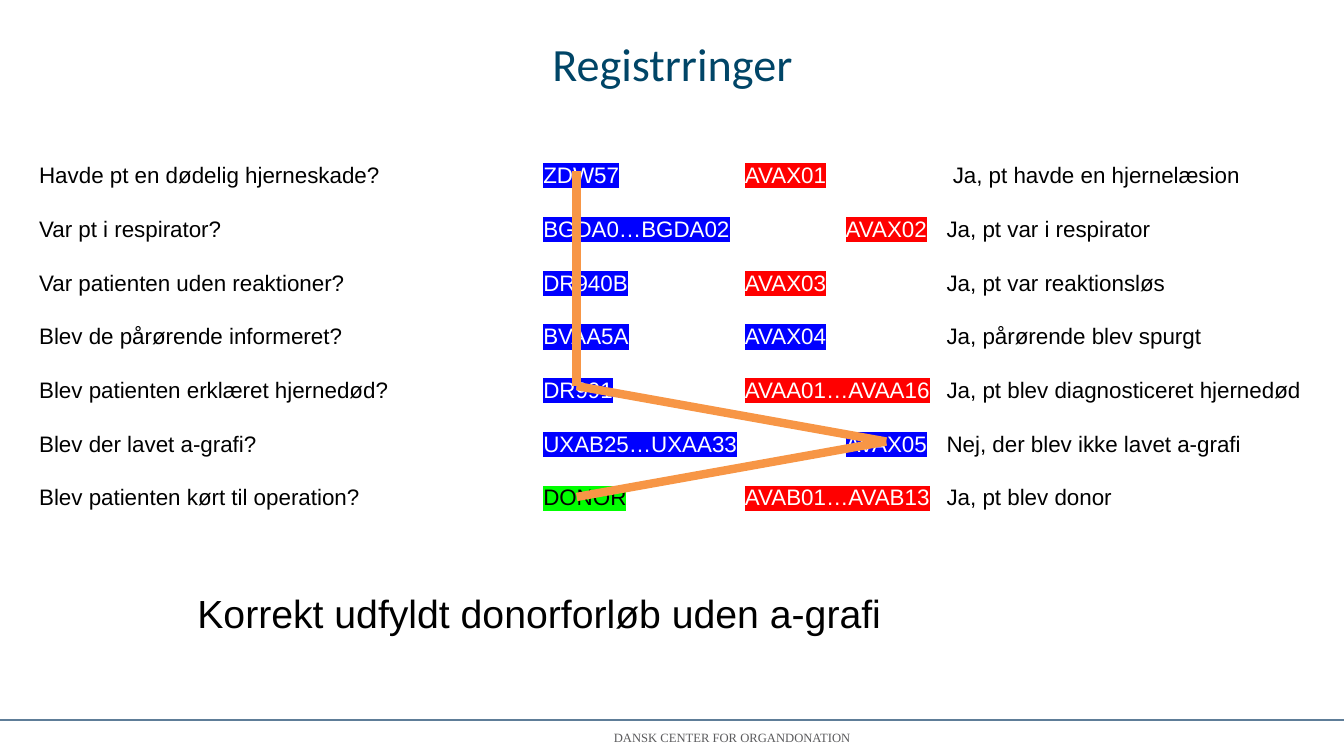
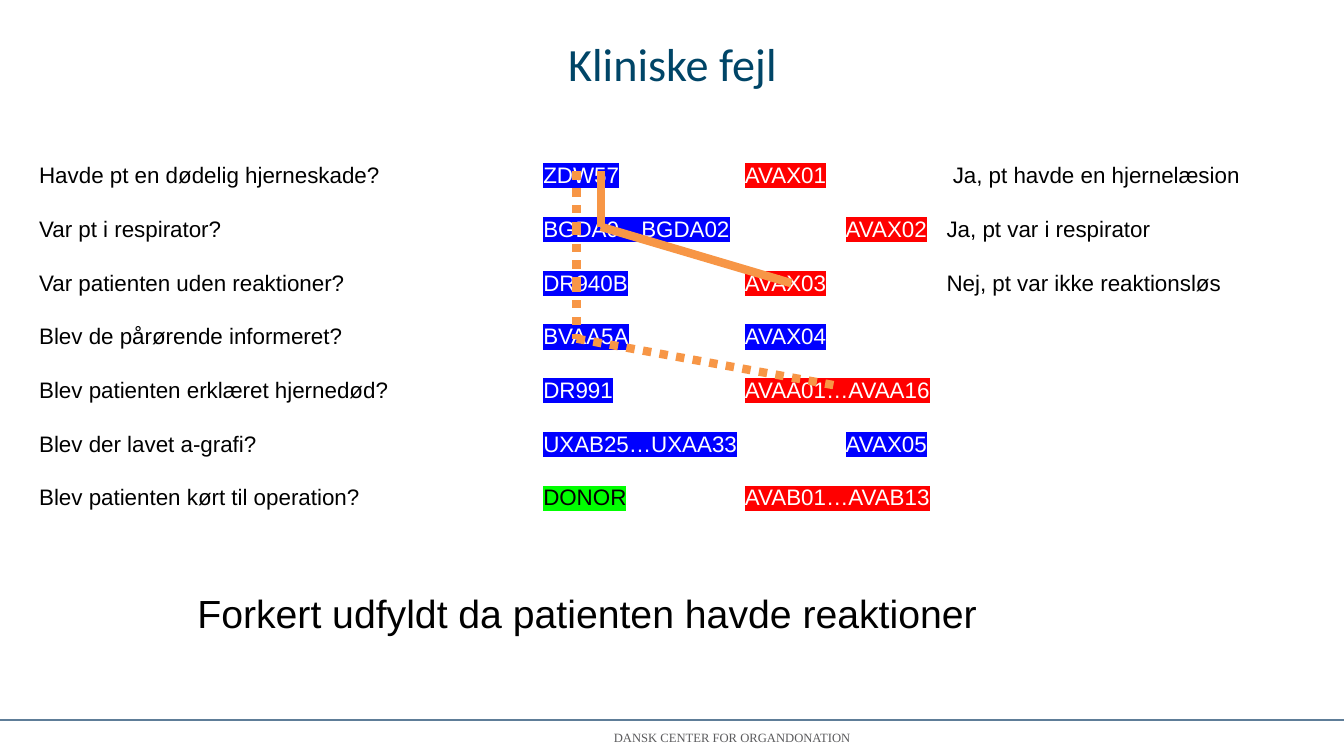
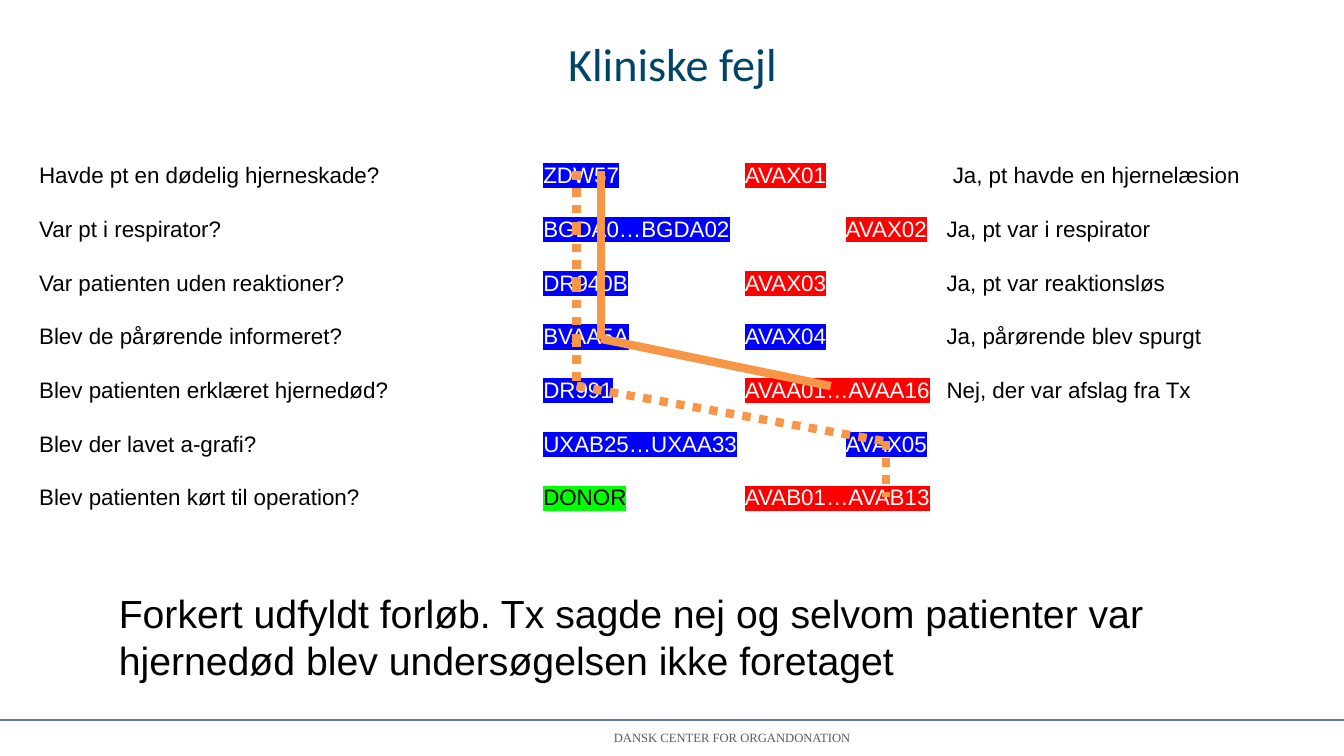
from lxml import etree
from pptx import Presentation
from pptx import util as u
from pptx.dml.color import RGBColor
from pptx.enum import dml, shapes, text
from pptx.oxml import ns

W, H = 13.33, 7.5
COLORS = {
    "title": "004567", "text": "000000", "white": "FFFFFF", "footer": "5B5B5D",
    "rule": "5E7D98", "path": "F79646",
    "blue": "0000FF", "red": "FF0000", "green": "00FF00",
}
CODE_TAB, NEAR_TAB, FAR_TAB, ANSWER_TAB = 5, 7, 8, 9
ROW_Y = [1.7, 2.25, 2.81, 3.36, 3.83, 4.38, 4.93]
MAIN_X, SIDE_X, FAR_X = 5.72, 5.96, 8.79

QUESTIONS = [
    ("Havde pt en dødelig hjerneskade?", "ZDW57", "blue", "AVAX01", "red", NEAR_TAB),
    ("Var pt i respirator?", "BGDA0…BGDA02", "blue", "AVAX02", "red", FAR_TAB),
    ("Var patienten uden reaktioner?", "DR940B", "blue", "AVAX03", "red", NEAR_TAB),
    ("Blev de pårørende informeret?", "BVAA5A", "blue", "AVAX04", "blue", NEAR_TAB),
    ("Blev patienten erklæret hjernedød?", "DR991", "blue", "AVAA01…AVAA16", "red", NEAR_TAB),
    ("Blev der lavet a-grafi?", "UXAB25…UXAA33", "blue", "AVAX05", "blue", FAR_TAB),
    ("Blev patienten kørt til operation?", "DONOR", "green", "AVAB01…AVAB13", "red", NEAR_TAB),
]
FIRST_ANSWERS = [" Ja, pt havde en hjernelæsion", "Ja, pt var i respirator"]
NO_REACTION, RELATIVES_ASKED = "Ja, pt var reaktionsløs", "Ja, pårørende blev spurgt"


def rgb(name):
    return RGBColor.from_string(COLORS[name])


def set_font(font, name, size, color):
    font.name = name
    font.size = u.Pt(size)
    font.color.rgb = rgb(color)


def add_text_box(s, x, y, w, h):
    tf = s.shapes.add_textbox(*map(u.Inches, (x, y, w, h))).text_frame
    tf.word_wrap = True
    return tf


def add_line(s, start, end, color, width, dashed=False):
    line = s.shapes.add_connector(
        shapes.MSO_CONNECTOR.STRAIGHT, *map(u.Inches, (*start, *end)))
    line.line.color.rgb = rgb(color)
    line.line.width = u.Pt(width)
    if dashed:
        line.line.dash_style = dml.MSO_LINE.ROUND_DOT
    etree.SubElement(line.element.spPr, ns.qn("a:effectLst"))
    return line


def add_path(s, points, dashed=False):
    stops = [(x, ROW_Y[row]) for x, row in points]
    for start, end in zip(stops, stops[1:]):
        add_line(s, start, end, "path", 6, dashed)


def add_tabs(p, positions):
    tabs = etree.SubElement(p._p.get_or_add_pPr(), ns.qn("a:tabLst"))
    for position in positions:
        etree.SubElement(tabs, ns.qn("a:tab"), pos=str(u.Inches(position)), algn="l")


def add_run(p, words):
    r = p.add_run()
    r.text = words
    return r


def add_code(p, code, color):
    add_run(p, "\t")
    r = add_run(p, code)
    r.font.color.rgb = rgb("text" if color == "green" else "white")
    mark = etree.SubElement(r._r.get_or_add_rPr(), ns.qn("a:highlight"))
    etree.SubElement(mark, ns.qn("a:srgbClr"), val=COLORS[color])


def add_questions(s, answers):
    tf = add_text_box(s, 0.29, 1.55, 12.84, 3.6)
    for i, (question, code, color, other, other_color, other_tab) in enumerate(QUESTIONS):
        p = tf.paragraphs[0] if i == 0 else tf.add_paragraph()
        add_tabs(p, (CODE_TAB, other_tab, ANSWER_TAB))
        p.line_spacing = u.Pt(19.2)
        if i:
            p.space_before = u.Pt(19.2)
        set_font(p.font, "Arial", 16, "text")
        add_run(p, question)
        add_code(p, code, color)
        add_code(p, other, other_color)
        if i < len(answers):
            add_run(p, "\t" + answers[i])


def add_conclusion(s, words, x, w, h):
    p = add_text_box(s, x, 5.8, w, h).paragraphs[0]
    p.text = words
    p.line_spacing = u.Pt(33.6)
    set_font(p.font, "Arial", 28, "text")


def set_title(s, words):
    title = s.shapes.title
    title.left, title.top, title.width, title.height = map(u.Inches, (0.67, 0.24, 12, 0.77))
    tf = title.text_frame
    tf.vertical_anchor = text.MSO_ANCHOR.MIDDLE
    p = tf.paragraphs[0]
    p.text = words
    p.alignment = text.PP_ALIGN.CENTER
    set_font(p.font, "Calibri", 33, "title")


def add_footer(s):
    layout = s.slide_layout
    for ph in list(layout.placeholders):
        if ph.placeholder_format.type != shapes.PP_PLACEHOLDER.TITLE:
            ph.element.getparent().remove(ph.element)
    box = s.shapes.add_textbox(*map(u.Inches, (4.9, 7.19, 4.72, 0.25)))
    p = box.text_frame.paragraphs[0]
    p.text = "DANSK CENTER FOR ORGANDONATION"
    p.alignment = text.PP_ALIGN.CENTER
    set_font(p.font, "Times New Roman", 9, "footer")
    rule = add_line(s, (0, 7.14), (W, 7.14), "rule", 1.5)
    for shape in (box, rule):
        layout.shapes.element.append(shape.element)


def add_slide(prs, title, answers):
    s = prs.slides.add_slide(prs.slide_layouts[5])
    if len(prs.slides) == 1:
        add_footer(s)
    set_title(s, title)
    add_questions(s, FIRST_ANSWERS + answers)
    return s


def main():
    prs = Presentation()
    prs.slide_width, prs.slide_height = u.Inches(W), u.Inches(H)
    down_to_death = [(MAIN_X, row) for row in range(5)]

    s = add_slide(prs, "Registrringer", [
        NO_REACTION, RELATIVES_ASKED, "Ja, pt blev diagnosticeret hjernedød",
        "Nej, der blev ikke lavet a-grafi", "Ja, pt blev donor"])
    add_path(s, down_to_death + [(FAR_X, 5), (MAIN_X, 6)])
    add_conclusion(s, "Korrekt udfyldt donorforløb uden a-grafi", 1.86, 9.06, 0.57)

    s = add_slide(prs, "Kliniske fejl", ["Nej, pt var ikke reaktionsløs"])
    add_path(s, down_to_death[:4] + [(8.32, 4)], dashed=True)
    add_path(s, [(SIDE_X, 0), (SIDE_X, 1), (7.85, 2)])
    add_conclusion(s, "Forkert udfyldt da patienten havde reaktioner", 1.86, 9.06, 0.57)

    s = add_slide(prs, "Kliniske fejl", [
        NO_REACTION, RELATIVES_ASKED, "Nej, der var afslag fra Tx"])
    add_path(s, down_to_death + [(FAR_X, 5), (FAR_X, 6)], dashed=True)
    add_path(s, [(SIDE_X, row) for row in range(4)] + [(8.24, 4)])
    add_conclusion(
        s, "Forkert udfyldt forløb. Tx sagde nej og selvom patienter var "
        "hjernedød blev undersøgelsen ikke foretaget", 1.08, 10.71, 1.04)

    prs.save("out.pptx")


if __name__ == "__main__":
    main()
